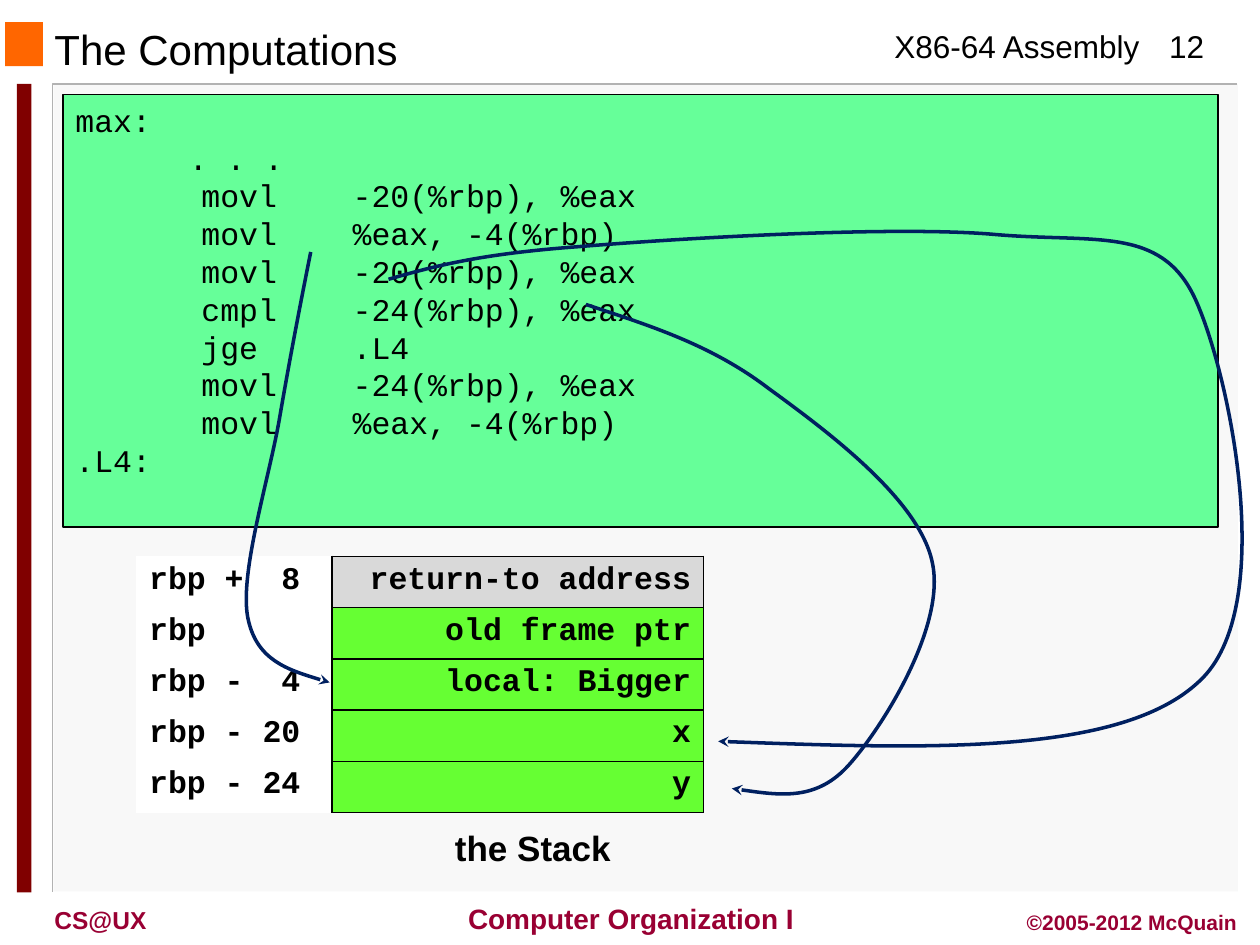
"""Build the slide that links max() instructions to their stack slots."""
from lxml import etree
from pptx import Presentation
from pptx import util as u
from pptx.dml.color import RGBColor
from pptx.enum import shapes, text
from pptx.oxml.ns import qn

CELL = 76200  # EMU in one cell of the 120 by 90 grid
UNITS = 100
COLOURS = {
    "ink": "000000", "white": "FFFFFF", "panel": "F8F8F8", "edge": "B2B2B2",
    "orange": "FF6600", "bar": "800000", "footer": "990033", "code": "66FF99",
    "return": "D9D9D9", "frame": "66FF33", "arrow": "002060",
}
LEFT, CENTER, RIGHT = text.PP_ALIGN.LEFT, text.PP_ALIGN.CENTER, text.PP_ALIGN.RIGHT
TOP, MIDDLE = text.MSO_ANCHOR.TOP, text.MSO_ANCHOR.MIDDLE

LABELS = [
    ("X86-64 Assembly", (84, 2, 26, 4.8), 18, "ink", False, LEFT, TOP),
    ("12", (109, 2, 8, 4.8), 18, "ink", False, CENTER, TOP),
    ("The Computations", (4, 2.3, 76, 4.6), 24, "ink", False, LEFT, MIDDLE),
    ("the Stack", (39, 78.1, 23.5, 5.3), 20, "ink", True, CENTER, TOP),
    ("CS@UX", (4, 85.6, 18, 4), 14, "footer", True, LEFT, TOP),
    ("Computer Organization I", (42.6, 85.3, 35, 4.4), 16, "footer", True, CENTER, MIDDLE),
    ("©2005-2012 McQuain", (94, 86, 25, 3.6), 12, "footer", True, RIGHT, TOP),
]
CODE = [
    "max:", ". . .",
    "\tmovl\t-20(%rbp), %eax", "\tmovl\t%eax, -4(%rbp)", "\tmovl\t-20(%rbp), %eax",
    "\tcmpl\t-24(%rbp), %eax", "\tjge\t.L4",
    "\tmovl\t-24(%rbp), %eax", "\tmovl\t%eax, -4(%rbp)", ".L4:",
]
STACK = [
    ("rbp +  8", "return-to address", "return"),
    ("rbp", "old frame ptr", "frame"),
    ("rbp -  4", "local: Bigger", "frame"),
    ("rbp - 20", "x", "frame"),
    ("rbp - 24", "y", "frame"),
]
ARROWS = [
    ((37, 22, 81.2, 48.9), [
        (37, 26.6), (41.2, 25.4), (45.5, 24.2), (55, 23.5), (64.6, 22.7), (84.6, 21.5),
        (94.4, 22.3), (104.2, 23.2), (110.5, 21.4), (113.8, 28.4), (117.1, 35.5),
        (121.8, 58), (114.2, 64.9), (106.7, 72), (87.5, 71.3), (68.4, 70.6)]),
    ((23.4, 24, 7.9, 41), [
        (29.6, 24), (28.6, 29), (27.6, 34.2), (26.6, 40), (25.6, 45.7),
        (22.8, 54.6), (23.6, 58.8), (24.4, 62.9), (28, 64), (31.4, 65)]),
    ((55.8, 29, 33.2, 46.6), [
        (55.8, 29), (61.8, 31), (67.7, 32.8), (73.2, 37), (78.7, 41), (87.6, 47.6),
        (88.8, 53.6), (90.1, 59.6), (84.1, 69.2), (80.9, 72.8), (77.8, 76.3),
        (73.8, 75.7), (69.7, 75.1)]),
]


def colour(name):
    """Return the named colour."""
    return RGBColor.from_string(COLOURS[name])


def cells(*counts):
    """Turn grid counts into lengths."""
    return [u.Emu(round(count * CELL)) for count in counts]


def units(points):
    """Turn grid points into whole freeform units."""
    return [(round(x * UNITS), round(y * UNITS)) for x, y in points]


def add_span(para, words, size, tint="ink", bold=False, face="Arial"):
    """Add one styled run to a paragraph."""
    span = para.add_run()
    span.text = words
    span.font.name, span.font.size, span.font.bold = face, u.Pt(size), bold
    span.font.color.rgb = colour(tint)


def add_label(page, words, place, size, tint, bold, align, anchor):
    """Add a one-line text box."""
    box = page.shapes.add_textbox(*cells(*place))
    box.text_frame.word_wrap = True
    box.text_frame.vertical_anchor = anchor
    para = box.text_frame.paragraphs[0]
    para.alignment = align
    add_span(para, words, size, tint, bold)


def add_block(page, place, tint, outline=None):
    """Add a flat rectangle."""
    block = page.shapes.add_shape(shapes.MSO_SHAPE.RECTANGLE, *cells(*place))
    block.shadow.inherit = False
    block.fill.solid()
    block.fill.fore_color.rgb = colour(tint)
    if outline:
        block.line.color.rgb, block.line.width = colour(outline), u.Pt(0.75)
    else:
        block.line.fill.background()
    return block


def add_outline(page, points, tint, width):
    """Add an open, unfilled line through grid points."""
    start, *rest = units(points)
    builder = page.shapes.build_freeform(*start, scale=CELL / UNITS)
    builder.add_line_segments(rest, close=False)
    outline = builder.convert_to_shape()
    outline.shadow.inherit = False
    outline.fill.background()
    outline.line.color.rgb, outline.line.width = colour(tint), u.Pt(width)
    return outline


def add_curved_arrow(page, place, points):
    """Add a Bézier curve that ends in an arrowhead."""
    left, top, width, height = place
    arrow = add_outline(page, [(left, top), (left + width, top + height)], "arrow", 2)
    track = arrow._element.find(".//" + qn("a:path"))
    for step in list(track):
        track.remove(step)
    local = units([(x - left, y - top) for x, y in points])
    groups = [("a:moveTo", local[:1])]
    groups += [("a:cubicBezTo", local[i:i + 3]) for i in range(1, len(local), 3)]
    for tag, group in groups:
        step = etree.SubElement(track, qn(tag))
        for x, y in group:
            etree.SubElement(step, qn("a:pt"), x=str(x), y=str(y))
    etree.SubElement(arrow.line._get_or_add_ln(), qn("a:tailEnd"), type="stealth")


def add_code(page):
    """Add the assembly listing with tab stops for its columns."""
    block = add_block(page, (6, 9, 110, 41.2), "code", "ink")
    frame = block.text_frame
    frame.word_wrap = True
    frame.vertical_anchor = TOP
    for index, words in enumerate(CODE):
        para = frame.paragraphs[0] if index == 0 else frame.add_paragraph()
        para.alignment, para.line_spacing = LEFT, u.Pt(21.6)
        props = para._p.get_or_add_pPr()
        if words.startswith("."):
            props.set("marL", str(cells(10.8 if words == ". . ." else 0)[0]))
        stops = etree.SubElement(props, qn("a:tabLst"))
        for stop in cells(12, 26.4):
            etree.SubElement(stops, qn("a:tab"), pos=str(stop), algn="l")
        add_span(para, words, 18, face="Courier New")


def add_border(cell, sides):
    """Draw black borders on the given sides of a cell."""
    props = cell._tc.get_or_add_tcPr()
    for index, side in enumerate(sides):
        edge = etree.Element(qn("a:ln" + side), w=str(u.Pt(1)))
        fill = etree.SubElement(edge, qn("a:solidFill"))
        etree.SubElement(fill, qn("a:srgbClr"), val=COLOURS["ink"])
        props.insert(index, edge)


def add_stack(page):
    """Add the table of stack slots."""
    table = page.shapes.add_table(len(STACK), 2, *cells(13, 53, 54, 24.4)).table
    table.first_row = table.horz_banding = False
    table.columns[0].width, table.columns[1].width = cells(18.6, 35.4)
    for row, (address, content, tint) in enumerate(STACK):
        columns = [(address, "white", LEFT, "R"), (content, tint, RIGHT, "LRTB")]
        for column, (words, fill, align, sides) in enumerate(columns):
            cell = table.cell(row, column)
            cell.fill.solid()
            cell.fill.fore_color.rgb = colour(fill)
            para = cell.text_frame.paragraphs[0]
            para.alignment = align
            add_span(para, words, 18, bold=True, face="Courier New")
            add_border(cell, sides)


def main():
    """Build and save the deck."""
    deck = Presentation()
    deck.slide_width, deck.slide_height = cells(120, 90)
    page = deck.slides.add_slide(deck.slide_layouts[6])
    add_block(page, (5.1, 8, 112.8, 76.9), "panel")
    add_outline(page, [(117.8, 8), (5, 8), (5, 85)], "edge", 1)
    add_outline(page, [(118, 8), (118, 85), (5.2, 85)], "white", 1)
    add_block(page, (0.5, 2.1, 3.6, 4.2), "orange")
    add_block(page, (1.6, 8, 1.4, 77), "bar")
    add_code(page)
    for label in LABELS:
        add_label(page, *label)
    add_stack(page)
    for place, points in ARROWS:
        add_curved_arrow(page, place, points)
    deck.save("out.pptx")


if __name__ == "__main__":
    main()
